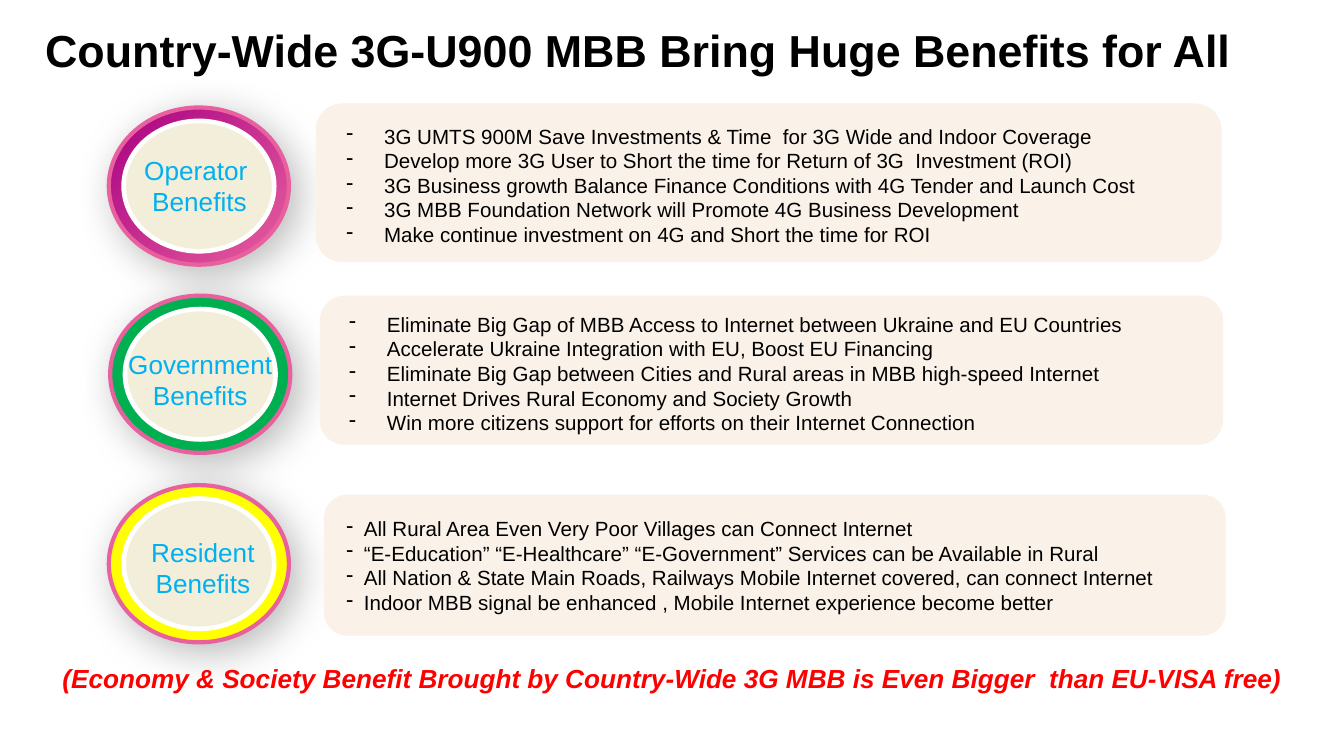
from lxml import etree
from pptx import Presentation
from pptx.dml.color import RGBColor
from pptx.enum.shapes import MSO_SHAPE
from pptx.enum.text import MSO_ANCHOR, MSO_AUTO_SIZE, PP_ALIGN
from pptx.oxml import parse_xml
from pptx.oxml.ns import nsdecls, qn
from pptx.util import Inches, Pt

COLORS = {
    "black": "000000",
    "white": "FFFFFF",
    "label": "00B0F0",
    "closing": "FF0000",
    "panel": "FAF1E8",
    "disc": "F2EEDA",
    "rim": "E8609E",
    "purple": "A80082",
    "green": "00B050",
    "yellow": "FFFF00",
}

BENEFITS = [
    {
        "label": ["Operator ", "Benefits"],
        "label_box": (0.97, 1.1, 1.03, 0.57),
        "ring": (0.81, 0.8),
        "ring_colors": ["purple", "rim"],
        "panel": (2.35, 0.77, 6.74, 1.18),
        "list_box": (2.48, 0.87, 6.36, 1.03),
        "indent": 0.28,
        "items": [
            "3G UMTS 900M Save Investments & Time  for 3G Wide and Indoor Coverage",
            "Develop more 3G User to Short the time for Return of 3G  Investment (ROI)",
            "3G Business growth Balance Finance Conditions with 4G Tender and Launch Cost",
            "3G MBB Foundation Network will Promote 4G Business Development",
            "Make continue investment on 4G and Short the time for ROI",
        ],
    },
    {
        "label": ["Government", "Benefits"],
        "label_box": (0.85, 2.54, 1.28, 0.57),
        "ring": (0.82, 2.2),
        "ring_colors": ["green"],
        "panel": (2.38, 2.2, 6.72, 1.11),
        "list_box": (2.5, 2.27, 6.39, 1.03),
        "indent": 0.28,
        "items": [
            "Eliminate Big Gap of MBB Access to Internet between Ukraine and EU Countries",
            "Accelerate Ukraine Integration with EU, Boost EU Financing",
            "Eliminate Big Gap between Cities and Rural areas in MBB high-speed Internet",
            "Internet Drives Rural Economy and Society Growth",
            "Win more citizens support for efforts on their Internet Connection",
        ],
    },
    {
        "label": ["Resident", "Benefits"],
        "label_box": (1.02, 3.94, 0.98, 0.57),
        "ring": (0.81, 3.61),
        "ring_colors": ["yellow"],
        "panel": (2.41, 3.68, 6.71, 1.05),
        "list_box": (2.48, 3.79, 6.4, 0.84),
        "indent": 0.13,
        "items": [
            "All Rural Area Even Very Poor Villages can Connect Internet",
            "“E-Education” “E-Healthcare” “E-Government” Services can be Available in Rural",
            "All Nation & State Main Roads, Railways Mobile Internet covered, can connect Internet",
            "Indoor MBB signal be enhanced , Mobile Internet experience become better",
        ],
    },
]


def rgb(name):
    return RGBColor.from_string(COLORS[name])


def write_text(frame, lines, size, color="black", bold=False, italic=False,
               align=PP_ALIGN.LEFT, wrap=True, indent=None):
    frame.word_wrap = wrap
    frame.auto_size = MSO_AUTO_SIZE.NONE
    frame.vertical_anchor = MSO_ANCHOR.TOP
    for index, line in enumerate(lines):
        paragraph = frame.paragraphs[0] if index == 0 else frame.add_paragraph()
        paragraph.text = line
        paragraph.alignment = align
        if indent:
            properties = paragraph._p.get_or_add_pPr()
            properties.set("marL", str(Inches(indent)))
            properties.set("indent", str(-Inches(indent)))
            etree.SubElement(properties, qn("a:buChar"), char="-")
        font = paragraph.font
        font.name = "Arial"
        font.size = Pt(size)
        font.bold = bold
        font.italic = italic
        font.color.rgb = rgb(color)


class SlideBuilder:
    def __init__(self, presentation):
        self.slide = presentation.slides.add_slide(presentation.slide_layouts[5])

    def title(self, text, box):
        title = self.slide.shapes.title
        title.left, title.top, title.width, title.height = map(Inches, box)
        write_text(title.text_frame, [text], 24, bold=True, align=PP_ALIGN.CENTER)

    def text(self, lines, box, size, **style):
        shape = self.slide.shapes.add_textbox(*map(Inches, box))
        write_text(shape.text_frame, lines, size, **style)

    def shape(self, kind, box, fills, line=None, width=0):
        shape = self.slide.shapes.add_shape(kind, *map(Inches, box))
        shape.shadow.inherit = False
        if len(fills) == 1:
            shape.fill.solid()
            shape.fill.fore_color.rgb = rgb(fills[0])
        else:
            shape.fill.gradient()
            shape.fill.gradient_angle = 315
            for stop, color in zip(shape.fill.gradient_stops, fills):
                stop.color.rgb = rgb(color)
        if line:
            shape.line.color.rgb = rgb(line)
            shape.line.width = Pt(width)
        else:
            shape.line.fill.background()
        return shape

    def panel(self, box):
        self.shape(MSO_SHAPE.ROUNDED_RECTANGLE, box, ["panel"])

    def ring(self, left, top, fills):
        outer = self.shape(MSO_SHAPE.OVAL, (left, top, 1.34, 1.17), fills, "rim", 2.25)
        effects = outer._element.spPr.find(qn("a:effectLst"))
        effects.append(parse_xml(
            f'<a:outerShdw {nsdecls("a")} blurRad="{Pt(22)}" dist="{Pt(6)}" '
            f'dir="2700000" algn="ctr" rotWithShape="0">'
            f'<a:srgbClr val="{COLORS["black"]}"><a:alpha val="28000"/></a:srgbClr>'
            f'</a:outerShdw>'))
        self.shape(MSO_SHAPE.OVAL, (left + 0.11, top + 0.1, 1.12, 0.97),
                   ["disc"], "white", 2.5)


def main():
    presentation = Presentation()
    presentation.slide_width = Inches(10)
    presentation.slide_height = Inches(10 * 9 / 16)
    builder = SlideBuilder(presentation)
    builder.title("Country-Wide 3G-U900 MBB Bring Huge Benefits for All",
                  (0.15, 0.12, 9.19, 0.5))
    for benefit in BENEFITS:
        builder.ring(*benefit["ring"], benefit["ring_colors"])
        builder.panel(benefit["panel"])
        builder.text(benefit["items"], benefit["list_box"], 11, indent=benefit["indent"])
        builder.text(benefit["label"], benefit["label_box"], 14, color="label",
                     align=PP_ALIGN.CENTER, wrap=False)
    builder.text(["(Economy & Society Benefit Brought by Country-Wide 3G MBB "
                  "is Even Bigger  than EU-VISA free)"],
                 (0.24, 4.88, 9.53, 0.34), 14, color="closing", bold=True,
                 italic=True, align=PP_ALIGN.CENTER)
    presentation.save("out.pptx")


if __name__ == "__main__":
    main()
